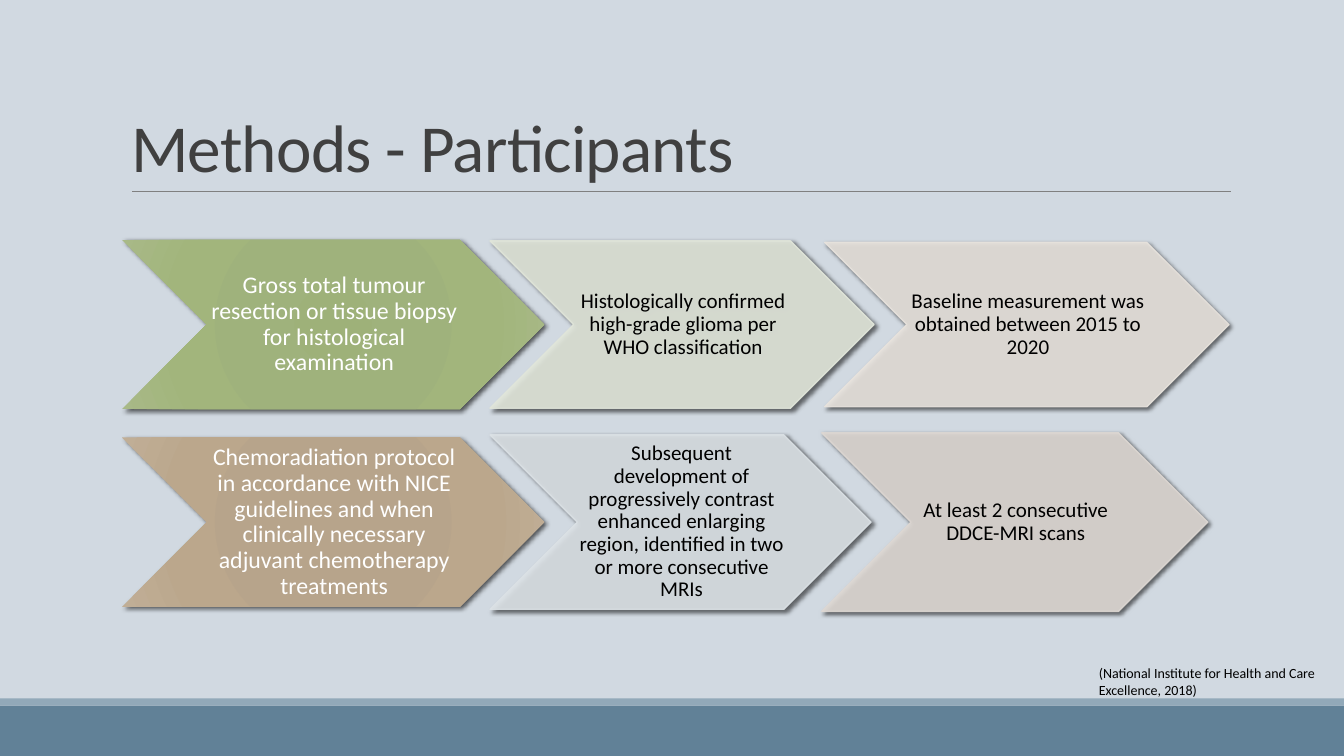
"""Build the study participants slide: two rows of three chevron steps."""
from dataclasses import dataclass

from lxml import etree
from pptx import Presentation
from pptx.dml.color import RGBColor
from pptx.enum.shapes import MSO_CONNECTOR, MSO_SHAPE
from pptx.enum.text import MSO_ANCHOR, MSO_AUTO_SIZE, PP_ALIGN
from pptx.oxml import parse_xml
from pptx.oxml.ns import nsdecls, qn
from pptx.util import Inches, Pt

CHEVRON, RECTANGLE = MSO_SHAPE.CHEVRON, MSO_SHAPE.RECTANGLE
STRAIGHT = MSO_CONNECTOR.STRAIGHT
MIDDLE, BOTTOM = MSO_ANCHOR.MIDDLE, MSO_ANCHOR.BOTTOM
LEFT, CENTER = PP_ALIGN.LEFT, PP_ALIGN.CENTER
NO_FIT = MSO_AUTO_SIZE.NONE
GROW = MSO_AUTO_SIZE.SHAPE_TO_FIT_TEXT


@dataclass(frozen=True)
class Theme:
    font: str = "Calibri"
    background: str = "D1D9E1"
    footer: str = "618197"
    footer_edge: str = "92A9B9"
    rule: str = "808080"
    title: str = "404040"
    dark: str = "000000"
    light: str = "FFFFFF"
    green: tuple = ("9EB179", "9FB27C", "A2B57C", "A8B987")
    brown: tuple = ("B6A388", "B7A48B", "BBA78C", "C0AE96")
    gradient_stops: tuple = (0, 34, 70, 100)
    title_size: int = 48
    lead_size: int = 17
    step_size: int = 15
    citation_size: int = 10


@dataclass(frozen=True)
class Step:
    left: float
    width: float
    height: float
    colours: tuple
    text: str


@dataclass(frozen=True)
class Row:
    middle: float
    steps: tuple


THEME = Theme()
ROWS = (
    Row(3.22, (
        Step(1.21, 4.19, 1.68, THEME.green,
             "Gross total tumour resection or tissue biopsy for histological examination"),
        Step(4.86, 3.81, 1.66, ("E1E6DA",),
             "Histologically confirmed high-grade glioma per WHO classification"),
        Step(8.18, 4.01, 1.63, ("E8E3DD",),
             "Baseline measurement was obtained between 2015 to 2020"),
    )),
    Row(5.18, (
        Step(1.21, 4.19, 1.68, THEME.brown,
             "Chemoradiation protocol in accordance with NICE guidelines and when "
             "clinically necessary adjuvant chemotherapy treatments"),
        Step(4.86, 3.78, 1.73, ("DCE2E6",),
             "Subsequent development of progressively contrast enhanced enlarging "
             "region, identified in two or more consecutive MRIs"),
        Step(8.15, 3.83, 1.77, ("DED8D3",), "At least 2 consecutive DDCE-MRI scans"),
    )),
)


def rgb(colour: str) -> RGBColor:
    return RGBColor.from_string(colour)


def format_paragraph(para, size: int, colour: str, align=LEFT, spacing: float = 1.0) -> None:
    para.alignment = align
    para.line_spacing = spacing
    para.font.name = THEME.font
    para.font.size = Pt(size)
    para.font.color.rgb = rgb(colour)


def add_band(page, top: float, height: float, colour: str) -> None:
    band = page.shapes.add_shape(RECTANGLE, 0, Inches(top), Inches(13.33), Inches(height))
    band.shadow.inherit = False
    band.fill.solid()
    band.fill.fore_color.rgb = rgb(colour)
    band.line.fill.background()


def add_rule(page) -> None:
    rule = page.shapes.add_connector(
        STRAIGHT, Inches(1.31), Inches(1.9), Inches(12.21), Inches(1.9))
    rule.line.color.rgb = rgb(THEME.rule)
    rule.line.width = Pt(0.5)
    etree.SubElement(rule._element.spPr, qn("a:effectLst"))


def format_title(page, text: str) -> None:
    title = page.shapes.title
    title.left, title.top = Inches(1.2), Inches(0.31)
    title.width, title.height = Inches(11), Inches(1.59)
    frame = title.text_frame
    frame.text = text
    frame.vertical_anchor = BOTTOM
    frame.auto_size = NO_FIT
    para = frame.paragraphs[0]
    format_paragraph(para, THEME.title_size, THEME.title, spacing=0.85)
    para.runs[0]._r.get_or_add_rPr().set("spc", "-50")


def fill_gradient(shape, colours: tuple) -> None:
    stops = "".join(
        f'<a:gs pos="{stop * 1000}"><a:srgbClr val="{colour}"/></a:gs>'
        for stop, colour in zip(THEME.gradient_stops, colours))
    gradient = parse_xml(
        f'<a:gradFill {nsdecls("a")}><a:gsLst>{stops}</a:gsLst><a:path path="circle">'
        '<a:fillToRect l="100000" t="100000" r="100000" b="100000"/></a:path></a:gradFill>')
    shape._element.spPr.find(qn("a:prstGeom")).addnext(gradient)
    shape.line.fill.background()


def fill_translucent(shape, colour: str) -> None:
    shape.fill.solid()
    shape.fill.fore_color.rgb = rgb(colour)
    shape.line.color.rgb = rgb(colour)
    shape.line.width = Pt(1)
    for value in shape._element.spPr.iter(qn("a:srgbClr")):
        etree.SubElement(value, qn("a:alpha"), val="90000")


def add_shadow(shape, blur: float) -> None:
    shape._element.spPr.append(parse_xml(
        f'<a:effectLst {nsdecls("a")}><a:outerShdw blurRad="{Pt(blur)}" dist="{Pt(2)}" '
        'dir="2700000" rotWithShape="0"><a:srgbClr val="000000"><a:alpha val="60000"/>'
        '</a:srgbClr></a:outerShdw></a:effectLst>'))


def add_step(page, step: Step, middle: float) -> None:
    chevron = page.shapes.add_shape(
        CHEVRON, Inches(step.left), Inches(middle - step.height / 2),
        Inches(step.width), Inches(step.height))
    is_lead = len(step.colours) > 1
    if is_lead:
        fill_gradient(chevron, step.colours)
    else:
        fill_translucent(chevron, step.colours[0])
    add_shadow(chevron, 3.5 if is_lead else 3)
    frame = chevron.text_frame
    frame.word_wrap = True
    frame.vertical_anchor = MIDDLE
    frame.margin_left, frame.margin_right = Inches(0.02), 0
    frame.margin_top = frame.margin_bottom = Inches(0.01)
    frame.text = step.text
    size, colour = ((THEME.lead_size, THEME.light) if is_lead
                    else (THEME.step_size, THEME.dark))
    format_paragraph(frame.paragraphs[0], size, colour, CENTER, 0.9)


def add_citation(page, text: str) -> None:
    box = page.shapes.add_textbox(Inches(10.8), Inches(6.54), Inches(2.53), Inches(0.44))
    frame = box.text_frame
    frame.word_wrap = True
    frame.auto_size = GROW
    frame.text = text
    format_paragraph(frame.paragraphs[0], THEME.citation_size, THEME.dark)


def main() -> None:
    deck = Presentation()
    deck.slide_width, deck.slide_height = Inches(13.33), Inches(7.5)
    page = deck.slides.add_slide(deck.slide_layouts[5])
    page.background.fill.solid()
    page.background.fill.fore_color.rgb = rgb(THEME.background)
    add_band(page, 7, 0.5, THEME.footer)
    add_band(page, 6.93, 0.07, THEME.footer_edge)
    add_rule(page)
    format_title(page, "Methods - Participants")
    for row in ROWS:
        for step in row.steps:
            add_step(page, step, row.middle)
    add_citation(page, "(National Institute for Health and Care Excellence, 2018)")
    deck.save("out.pptx")


if __name__ == "__main__":
    main()
